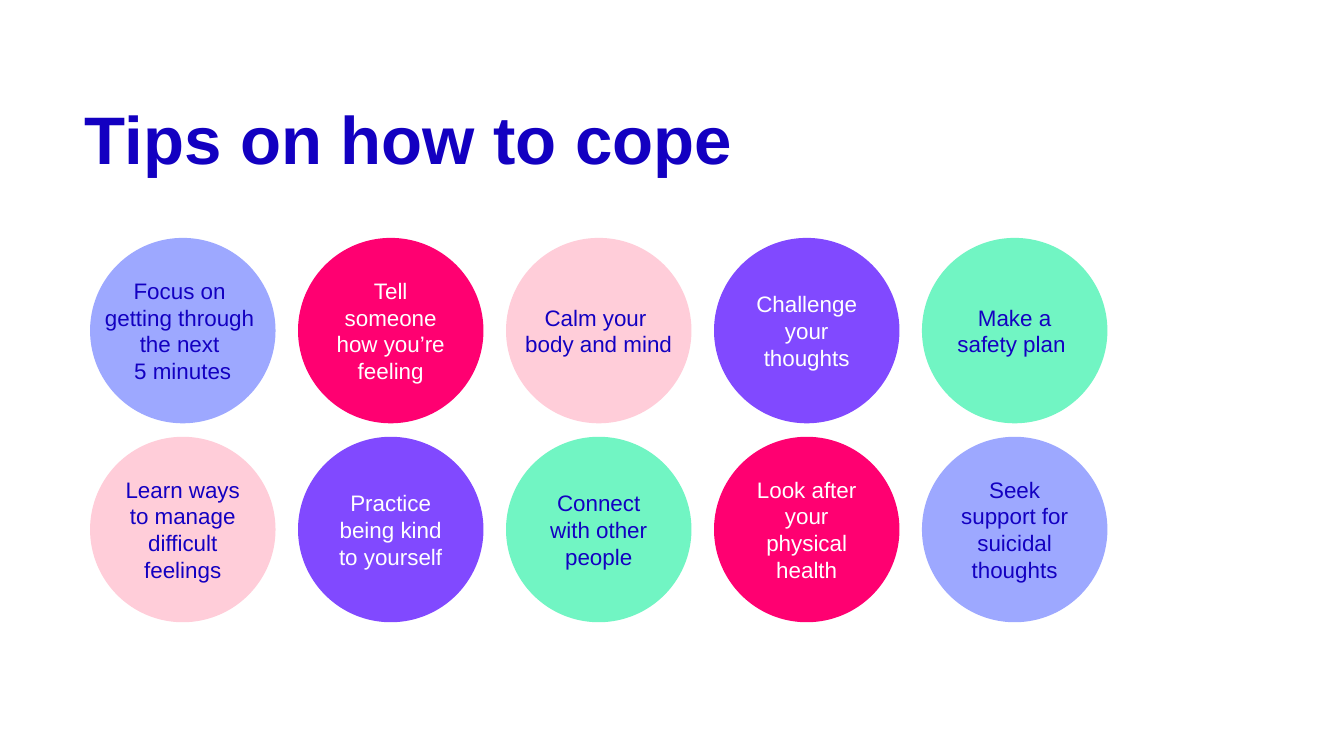
from pptx import Presentation
from pptx.dml.color import RGBColor
from pptx.enum.shapes import MSO_SHAPE
from pptx.enum.text import MSO_ANCHOR, PP_ALIGN
from pptx.util import Inches, Pt

OVAL = MSO_SHAPE.OVAL
MIDDLE, BOTTOM = MSO_ANCHOR.MIDDLE, MSO_ANCHOR.BOTTOM
LEFT, CENTER = PP_ALIGN.LEFT, PP_ALIGN.CENTER

COLORS = {
    "navy": "1300C1", "white": "FFFFFF", "blue": "9DA8FF", "red": "FF0071",
    "pink": "FFCDD9", "purple": "8149FF", "mint": "71F5C3",
}

# Content: each tip is (lines, fill, text colour); several lines turn wrapping off
TITLE = "Tips on how to cope"
TIP_ROWS = [
    [
        (["Focus on ", "getting through ", "the next ", "5 minutes"], "blue", "navy"),
        (["Tell someone how you’re feeling"], "red", "white"),
        (["Calm your ", "body and mind"], "pink", "navy"),
        (["Challenge your thoughts"], "purple", "white"),
        (["Make a safety plan "], "mint", "navy"),
    ],
    [
        (["Learn ways to manage difficult feelings"], "pink", "navy"),
        (["Practice being kind to yourself"], "purple", "white"),
        (["Connect with other people"], "mint", "navy"),
        (["Look after your physical health"], "red", "white"),
        (["Seek support for suicidal thoughts"], "blue", "navy"),
    ],
]

# Widescreen page and circle grid, in inches
PAGE_WIDTH = 10
PAGE_HEIGHT = PAGE_WIDTH * 9 / 16
GRID_LEFT, GRID_RIGHT, GRID_TOP = 0.67, 8.24, 1.77
DIAMETER, ROW_STEP, INSET = 1.38, 1.48, 0.04
COLUMN_STEP = (GRID_RIGHT - GRID_LEFT - DIAMETER) / (len(TIP_ROWS[0]) - 1)


def rgb(name):
    return RGBColor.from_string(COLORS[name])


def set_values(target, values):
    for name, value in values.items():
        setattr(target, name, value)


def write_lines(frame, lines, color, size, bold, alignment):
    for index, line in enumerate(lines):
        para = frame.paragraphs[0] if index == 0 else frame.add_paragraph()
        para.alignment = alignment
        span = para.add_run()
        span.text = line
        set_values(span.font, {"name": "Arial", "size": Pt(size), "bold": bold})
        span.font.color.rgb = rgb(color)


def add_tip(page, row, column, lines, fill, color):
    circle = page.shapes.add_shape(
        OVAL,
        Inches(GRID_LEFT + column * COLUMN_STEP), Inches(GRID_TOP + row * ROW_STEP),
        Inches(DIAMETER), Inches(DIAMETER),
    )
    circle.shadow.inherit = False
    circle.fill.solid()
    circle.fill.fore_color.rgb = rgb(fill)
    circle.line.fill.background()
    wraps = len(lines) == 1
    side = Inches(0 if len(lines) > 2 else INSET)
    set_values(circle.text_frame, {
        "vertical_anchor": MIDDLE, "word_wrap": wraps,
        "margin_left": side, "margin_right": side,
        "margin_top": Inches(INSET), "margin_bottom": Inches(INSET),
    })
    write_lines(circle.text_frame, lines, color, 12, False, CENTER)


deck = Presentation()
set_values(deck, {"slide_width": Inches(PAGE_WIDTH), "slide_height": Inches(PAGE_HEIGHT)})
page = deck.slides.add_slide(deck.slide_layouts[5])

# Title
title = page.shapes.title
set_values(title, {
    "left": Inches(0.53), "top": Inches(0.13),
    "width": Inches(6.68), "height": Inches(1.25),
})
set_values(title.text_frame, {"vertical_anchor": BOTTOM, "word_wrap": True})
write_lines(title.text_frame, [TITLE], "navy", 36, True, LEFT)
title.text_frame.paragraphs[0].line_spacing = 0.9

# Tip circles
for row, tips in enumerate(TIP_ROWS):
    for column, tip in enumerate(tips):
        add_tip(page, row, column, *tip)

deck.save("out.pptx")
